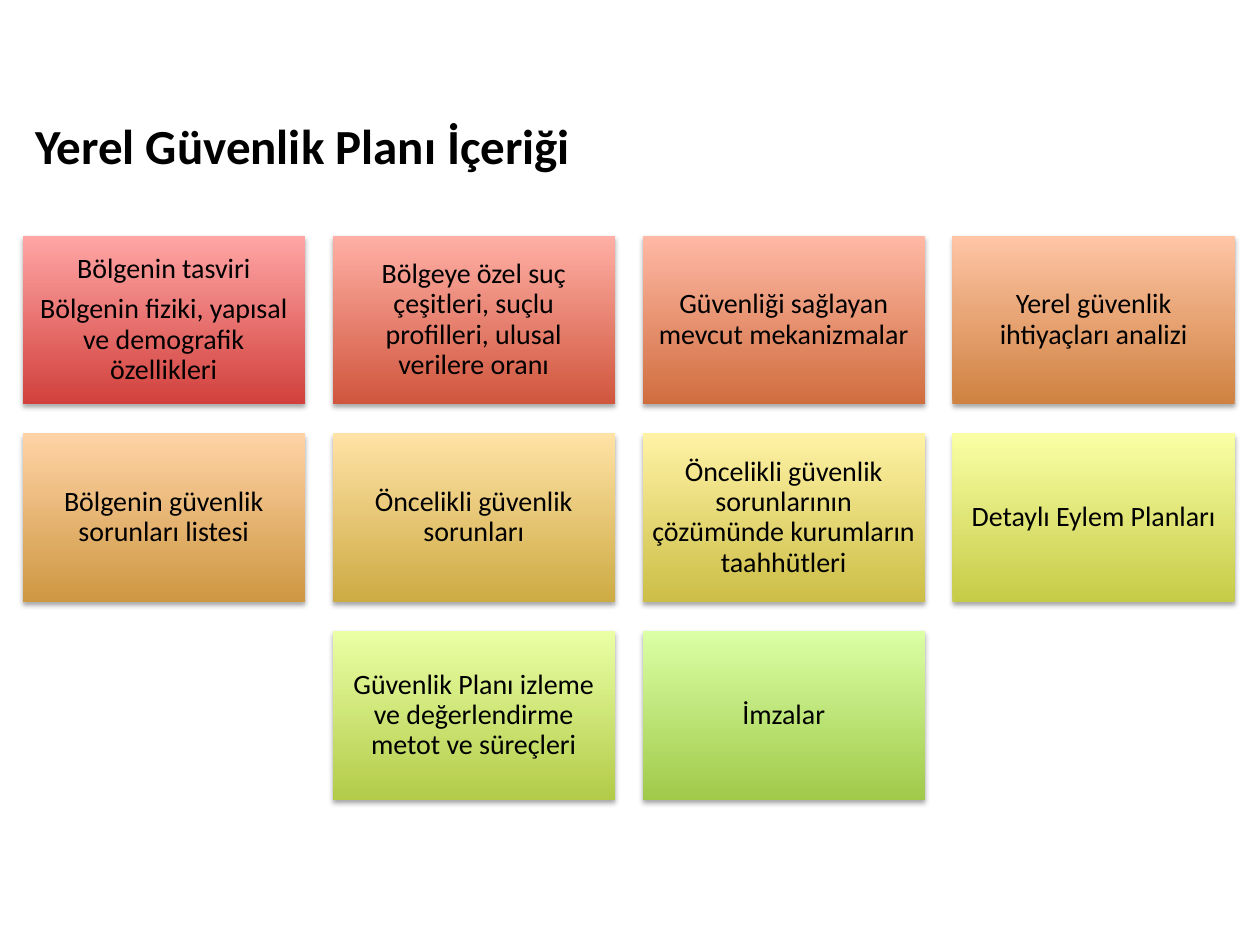
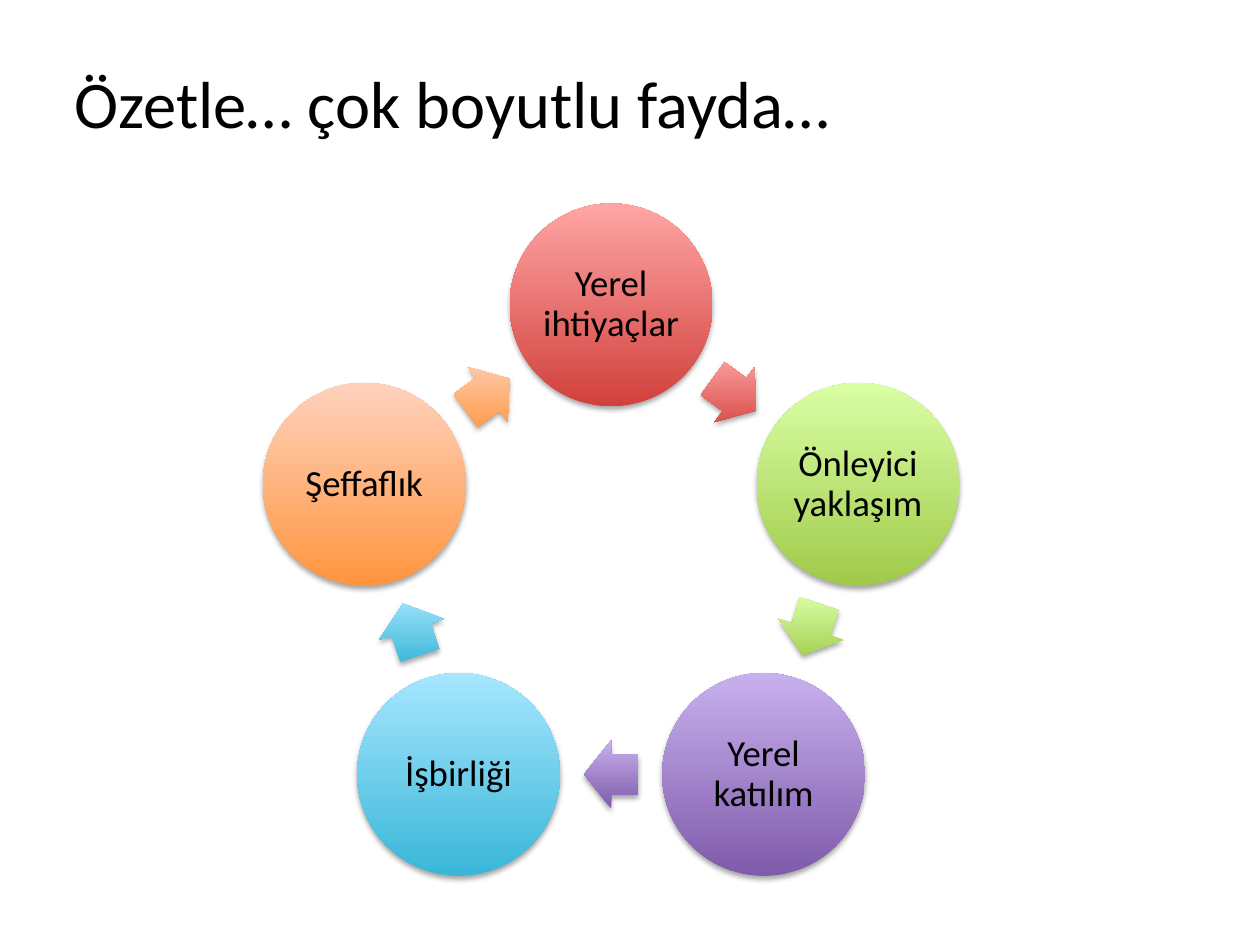
import math

import pptx
import pptx.dml.color
import pptx.enum.shapes
import pptx.enum.text
import pptx.oxml.ns
import pptx.util
from lxml import etree

Inches = pptx.util.Inches
Pt = pptx.util.Pt
RGB = pptx.dml.color.RGBColor
SHAPE = pptx.enum.shapes.MSO_SHAPE
ALIGN = pptx.enum.text.PP_ALIGN
ANCHOR = pptx.enum.text.MSO_ANCHOR
qn = pptx.oxml.ns.qn

FONT = "Calibri"
BLACK = RGB(0x00, 0x00, 0x00)

# Gradients as (bottom, top)
RED = RGB(0xD1, 0x40, 0x3C), RGB(0xFF, 0xA6, 0xA5)
CORAL = RGB(0xD0, 0x56, 0x3D), RGB(0xFF, 0xAF, 0xA5)
RUST = RGB(0xD0, 0x6D, 0x3F), RGB(0xFF, 0xB9, 0xA5)
COPPER = RGB(0xCF, 0x82, 0x41), RGB(0xFF, 0xC5, 0xA5)
AMBER = RGB(0xCE, 0x97, 0x42), RGB(0xFF, 0xD3, 0xA5)
GOLD = RGB(0xCD, 0xAB, 0x44), RGB(0xFF, 0xE2, 0xA5)
YELLOW = RGB(0xCC, 0xBE, 0x46), RGB(0xFF, 0xF2, 0xA5)
LEMON = RGB(0xC6, 0xCB, 0x47), RGB(0xFA, 0xFF, 0xA5)
LIME = RGB(0xB3, 0xCB, 0x49), RGB(0xEA, 0xFF, 0xA5)
GREEN = RGB(0xA0, 0xCA, 0x4A), RGB(0xDA, 0xFF, 0xA5)
PURPLE = RGB(0x7F, 0x5B, 0xAB), RGB(0xC8, 0xB0, 0xED)
BLUE = RGB(0x39, 0xB7, 0xD8), RGB(0xA7, 0xE6, 0xFF)
ORANGE = RGB(0xFF, 0x95, 0x3E), RGB(0xFF, 0xD2, 0xBD)

deck = pptx.Presentation()
deck.slide_width = Inches(10)
deck.slide_height = Inches(7.5)


def start(text, left, top, width, height, size, bold, align, anchor):
    """Add a slide with its title placed and formatted."""
    slide = deck.slides.add_slide(deck.slide_layouts[5])
    title = slide.shapes.title
    title.left, title.top = Inches(left), Inches(top)
    title.width, title.height = Inches(width), Inches(height)
    frame = title.text_frame
    frame.text = text
    frame.auto_size = pptx.enum.text.MSO_AUTO_SIZE.NONE
    frame.vertical_anchor = anchor
    para = frame.paragraphs[0]
    para.alignment = align
    para.font.name, para.font.size = FONT, Pt(size)
    para.font.bold, para.font.color.rgb = bold, BLACK
    return slide


def block(slide, kind, left, top, width, height, hues, text="", size=16, inset=0.07):
    """Add a shape with an upright gradient, a soft shadow and centred text."""
    shape = slide.shapes.add_shape(
        kind, Inches(left), Inches(top), Inches(width), Inches(height))
    shape.line.fill.background()
    shape.fill.gradient()
    shape.fill.gradient_angle = 90
    for stop, hue in zip(shape.fill.gradient_stops, hues):
        stop.color.rgb = hue
    props = shape.element.spPr
    props.find(qn("a:gradFill")).set("rotWithShape", "0")

    shape.shadow.inherit = False
    shade = etree.SubElement(
        props.find(qn("a:effectLst")), qn("a:outerShdw"),
        blurRad=str(Pt(3.1)), dist=str(Pt(1.8)), dir="5400000", rotWithShape="0")
    tone = etree.SubElement(shade, qn("a:srgbClr"), val=str(BLACK))
    etree.SubElement(tone, qn("a:alpha"), val="35000")

    if text:
        frame = shape.text_frame
        frame.text = text
        frame.word_wrap = True
        frame.vertical_anchor = ANCHOR.MIDDLE
        frame.margin_left = frame.margin_right = Inches(inset)
        frame.margin_top = frame.margin_bottom = Inches(inset)
        for para in frame.paragraphs:
            para.alignment = ALIGN.CENTER
            para.line_spacing = 0.9
            para.space_after = Pt(0.35 * size)
            para.font.name, para.font.size = FONT, Pt(size)
            para.font.color.rgb = BLACK
    return shape


# Slide 1: contents of the plan, as (column, row, gradient, text)
slide = start("Yerel Güvenlik Planı İçeriği", 0.18, 0.87, 9.18, 0.57,
              28, True, ALIGN.LEFT, ANCHOR.TOP)
tiles = [
    (0, 0, RED, "Bölgenin tasviri\nBölgenin fiziki, yapısal ve demografik özellikleri"),
    (1, 0, CORAL, "Bölgeye özel suç çeşitleri, suçlu profilleri, ulusal verilere oranı"),
    (2, 0, RUST, "Güvenliği sağlayan mevcut mekanizmalar"),
    (3, 0, COPPER, "Yerel güvenlik ihtiyaçları analizi"),
    (0, 1, AMBER, "Bölgenin güvenlik sorunları listesi"),
    (1, 1, GOLD, "Öncelikli güvenlik sorunları"),
    (2, 1, YELLOW, "Öncelikli güvenlik sorunlarının çözümünde kurumların taahhütleri"),
    (3, 1, LEMON, "Detaylı Eylem Planları"),
    (1, 2, LIME, "Güvenlik Planı izleme ve değerlendirme metot ve süreçleri"),
    (2, 2, GREEN, "İmzalar"),
]
for col, row, hues, text in tiles:
    block(slide, SHAPE.RECTANGLE, 0.18 + 2.46 * col, 1.87 + 1.57 * row,
          2.24, 1.34, hues, text)

# Slide 2: a ring of circles, with an arrow halfway to each next one
slide = start("Özetle… çok boyutlu fayda…", 0.34, 0.18, 6.5, 1.25,
              38, False, ALIGN.CENTER, ANCHOR.MIDDLE)
MID_X, MID_Y, RADIUS, DISC = 4.85, 4.48, 2.06, 1.61
WIDE, HIGH = 0.43, 0.54
gains = [
    ("Yerel ihtiyaçlar", RED),
    ("Önleyici yaklaşım", GREEN),
    ("Yerel katılım", PURPLE),
    ("İşbirliği", BLUE),
    ("Şeffaflık", ORANGE),
]
step = 360 / len(gains)
reach = RADIUS * math.cos(math.radians(step / 2))
for i, (text, hues) in enumerate(gains):
    turn = math.radians(step * i)
    x = MID_X + RADIUS * math.sin(turn)
    y = MID_Y - RADIUS * math.cos(turn)
    block(slide, SHAPE.OVAL, x - DISC / 2, y - DISC / 2, DISC, DISC,
          hues, text, 21, 0.03)

    angle = step * (i + 0.5)
    turn = math.radians(angle)
    x = MID_X + reach * math.sin(turn)
    y = MID_Y - reach * math.cos(turn)
    arrow = block(slide, SHAPE.RIGHT_ARROW, x - WIDE / 2, y - HIGH / 2,
                  WIDE, HIGH, hues)
    arrow.adjustments[0] = 0.6
    arrow.adjustments[1] = 0.5
    arrow.rotation = angle

deck.save("out.pptx")
